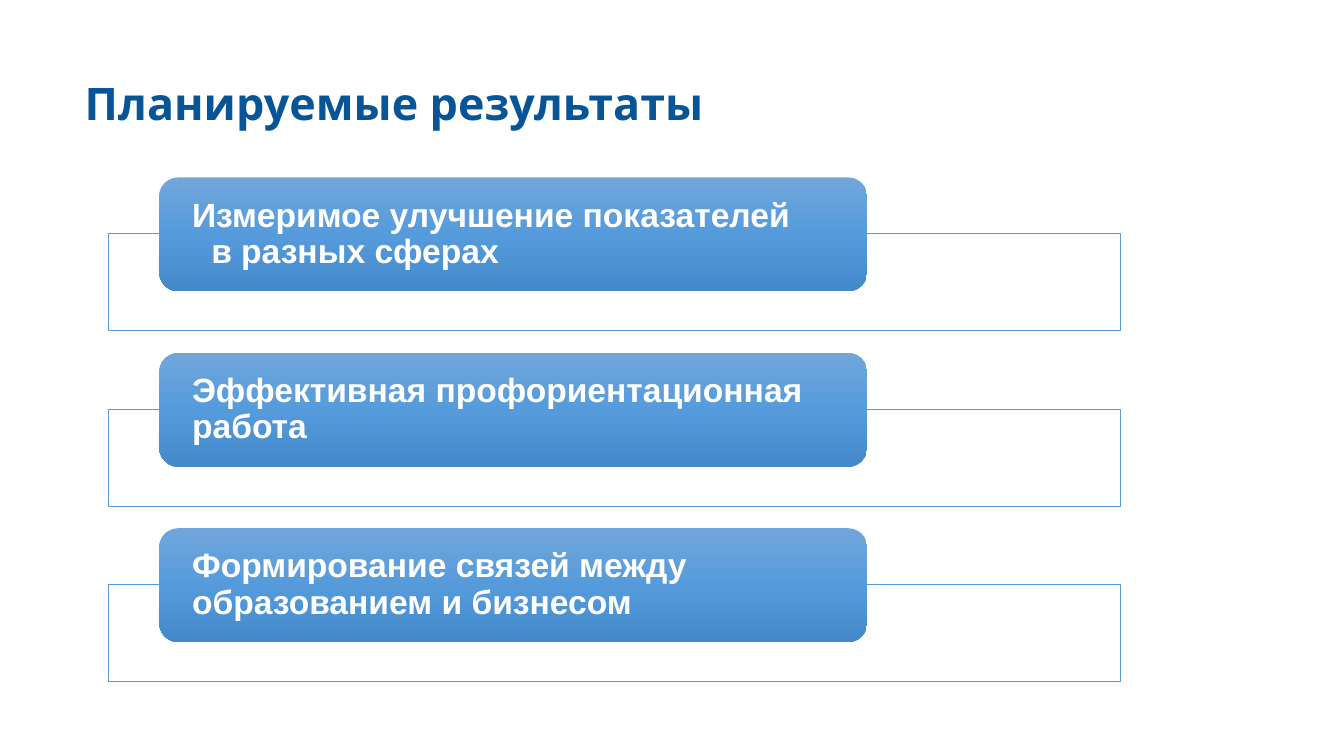
import copy
import dataclasses

import pptx
import pptx.dml.color
import pptx.enum.shapes
import pptx.enum.text
import pptx.oxml.ns
import pptx.shapes.autoshape
import pptx.slide
import pptx.text.text
import pptx.util

Inches = pptx.util.Inches
ShapeKind = pptx.enum.shapes.MSO_SHAPE


@dataclasses.dataclass(frozen=True)
class Theme:
    title_font: str = "Karla"
    body_font: str = "Arial"
    title_size: int = 32
    body_size: int = 24
    title_color: str = "075597"
    white: str = "FFFFFF"
    frame_line: str = "5B9BD5"
    gradient: tuple[str, ...] = ("71A6DB", "559BDB", "448ACA")
    line_spacing: float = 0.9


@dataclasses.dataclass(frozen=True)
class Result:
    lines: tuple[str, ...]
    hanging: float = 0


THEME = Theme()
TITLE = "Планируемые результаты"
RESULTS = (
    Result(("Измеримое улучшение показателей", "в разных сферах"), hanging=0.19),
    Result(("Эффективная профориентационная работа",)),
    Result(("Формирование связей между образованием и бизнесом",)),
)
FIRST_TOP = 1.76
ROW_STEP = 1.74
FRAME_OFFSET = 0.56


def color(value: str) -> pptx.dml.color.RGBColor:
    return pptx.dml.color.RGBColor.from_string(value)


def add_run(para: pptx.text.text._Paragraph, text: str, name: str, size: int, value: str) -> None:
    run = para.add_run()
    run.text = text
    run.font.name = name
    run.font.size = pptx.util.Pt(size)
    run.font.bold = True
    run.font.color.rgb = color(value)


def format_para(para: pptx.text.text._Paragraph) -> None:
    para.alignment = pptx.enum.text.PP_ALIGN.LEFT
    para.line_spacing = THEME.line_spacing


def add_title(page: pptx.slide.Slide) -> None:
    title = page.shapes.title
    title.left, title.top = Inches(0.74), Inches(0.58)
    title.width, title.height = Inches(8.32), Inches(0.94)
    title.text_frame.vertical_anchor = pptx.enum.text.MSO_ANCHOR.MIDDLE
    para = title.text_frame.paragraphs[0]
    format_para(para)
    add_run(para, TITLE, THEME.title_font, THEME.title_size, THEME.title_color)


def add_frame(page: pptx.slide.Slide, top: float) -> None:
    frame = page.shapes.add_shape(
        ShapeKind.RECTANGLE, Inches(1.08), Inches(top), Inches(10.03), Inches(0.96)
    )
    frame.shadow.inherit = False
    frame.fill.solid()
    frame.fill.fore_color.rgb = color(THEME.white)
    frame.line.color.rgb = color(THEME.frame_line)
    frame.line.width = pptx.util.Pt(0.5)


def fill_gradient(shape: pptx.shapes.autoshape.Shape) -> None:
    shape.fill.gradient()
    shape.fill.gradient_angle = 270
    stop_list = shape._element.spPr.find(".//" + pptx.oxml.ns.qn("a:gsLst"))
    stop_list.append(copy.deepcopy(stop_list[0]))
    last = len(THEME.gradient) - 1
    for index, stop in enumerate(shape.fill.gradient_stops):
        stop.position = index / last
        stop.color.rgb = color(THEME.gradient[index])


def add_card(page: pptx.slide.Slide, result: Result, top: float) -> None:
    card = page.shapes.add_shape(
        ShapeKind.ROUNDED_RECTANGLE, Inches(1.58), Inches(top), Inches(7.02), Inches(1.13)
    )
    card.shadow.inherit = False
    card.line.fill.background()
    fill_gradient(card)
    box = card.text_frame
    box.word_wrap = True
    box.vertical_anchor = pptx.enum.text.MSO_ANCHOR.MIDDLE
    box.margin_left = box.margin_right = Inches(0.27)
    box.margin_top = box.margin_bottom = 0
    para = box.paragraphs[0]
    format_para(para)
    if result.hanging:
        properties = para._p.get_or_add_pPr()
        properties.set("marL", str(Inches(result.hanging)))
        properties.set("indent", str(-Inches(result.hanging)))
    for index, line in enumerate(result.lines):
        if index:
            para.add_line_break()
        add_run(para, line, THEME.body_font, THEME.body_size, THEME.white)


def main() -> None:
    deck = pptx.Presentation()
    deck.slide_width, deck.slide_height = Inches(13.33), Inches(7.5)
    page = deck.slides.add_slide(deck.slide_layouts.get_by_name("Title Only"))
    add_title(page)
    for index, result in enumerate(RESULTS):
        top = FIRST_TOP + index * ROW_STEP
        add_frame(page, top + FRAME_OFFSET)
        add_card(page, result, top)
    deck.save("out.pptx")


if __name__ == "__main__":
    main()
